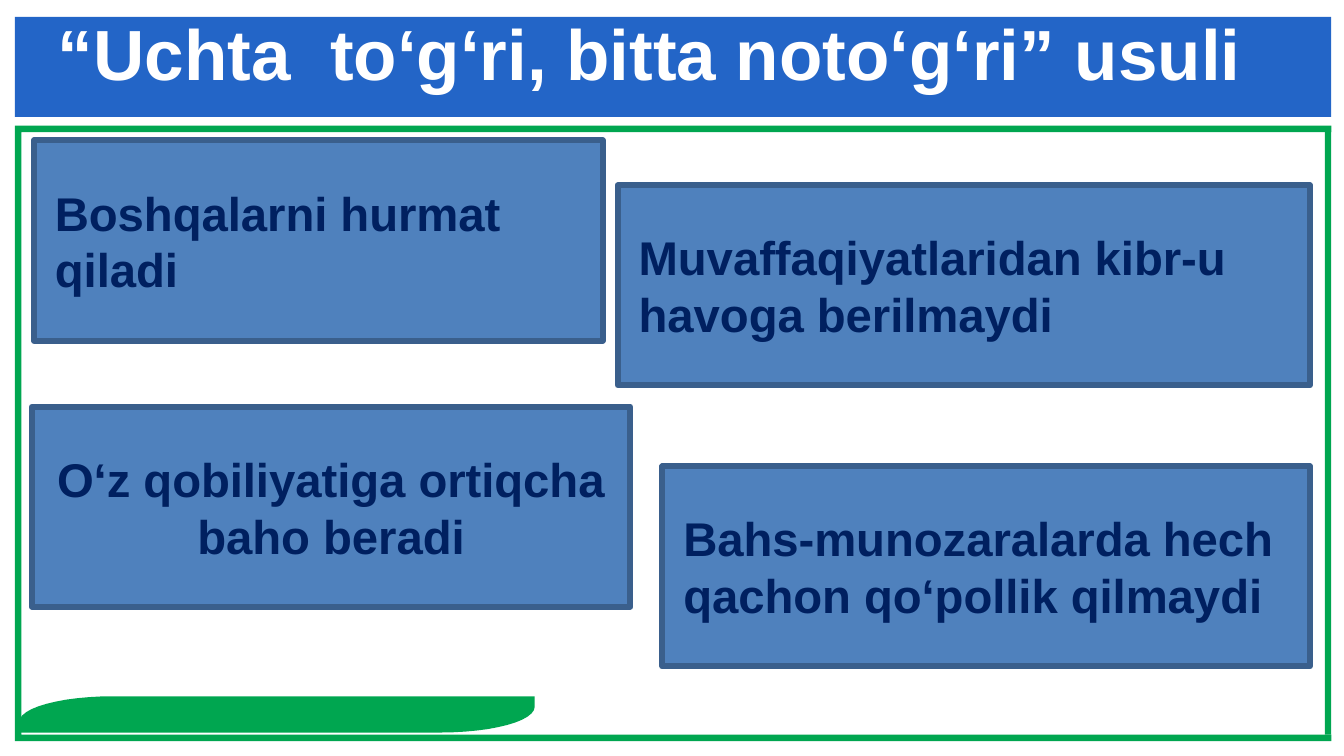
import math
import pptx
import pptx.util
import pptx.dml.color
import pptx.enum.shapes
import pptx.enum.text

Inches, Pt = pptx.util.Inches, pptx.util.Pt
RGB = pptx.dml.color.RGBColor.from_string
ALIGN = pptx.enum.text.PP_ALIGN
ANCHOR = pptx.enum.text.MSO_ANCHOR
RECTANGLE = pptx.enum.shapes.MSO_SHAPE.RECTANGLE

TITLE = "“Uchta  to‘g‘ri, bitta noto‘g‘ri” usuli"
STATEMENTS = [
    {"text": "Muvaffaqiyatlaridan kibr-u havoga berilmaydi",
     "left": 2.9, "top": 0.87, "width": 3.25, "align": ALIGN.LEFT},
    {"text": "Boshqalarni hurmat qiladi",
     "left": 0.16, "top": 0.66, "width": 2.67, "align": ALIGN.LEFT},
    {"text": "Bahs-munozaralarda hech qachon qo‘pollik qilmaydi",
     "left": 3.11, "top": 2.19, "width": 3.04, "align": ALIGN.LEFT},
    {"text": "O‘z qobiliyatiga ortiqcha baho beradi",
     "left": 0.15, "top": 1.91, "width": 2.81, "align": ALIGN.CENTER},
]

THEME = {
    "font": "Arial", "title_size": 24, "title_spacing": 12, "body_size": 16,
    "line_width": 2, "green": "00A650", "header": "2365C7", "title": "FFFFFF",
    "box": "4F81BD", "box_line": "3A5F8C", "body": "002060",
}

SLIDE_W, SLIDE_H = 6.31, 3.55
LEFT, RIGHT = 0.07, 6.25
HEADER_TOP, HEADER_H = 0.08, 0.47
FRAME_TOP, FRAME_BOTTOM, FRAME_EDGE = 0.59, 3.48, 0.03
TITLE_BOX = (0.15, 0.23, 5.8, 0.3)
STATEMENT_H = 0.94
RIBBON_LEFT, RIBBON_TOP, RIBBON_RIGHT, RIBBON_BOTTOM = 0.09, 3.27, 2.51, 3.44
CURVE_W, CURVE_H, CURVE_STEPS = 0.44, 0.12, 12


def write(sp, text, size, color, align=ALIGN.LEFT, anchor=ANCHOR.TOP, wrap=True, spacing=None):
    tf = sp.text_frame
    tf.word_wrap = wrap
    tf.vertical_anchor = anchor
    p = tf.paragraphs[0]
    p.alignment = align
    if spacing:
        p.line_spacing = Pt(spacing)
    r = p.add_run()
    r.text = text
    r.font.name = THEME["font"]
    r.font.size = Pt(size)
    r.font.bold = True
    r.font.color.rgb = RGB(color)


def paint(sp, fill, line=None):
    sp.shadow.inherit = False
    sp.fill.solid()
    sp.fill.fore_color.rgb = RGB(fill)
    if line:
        sp.line.color.rgb = RGB(line)
        sp.line.width = Pt(THEME["line_width"])
    else:
        sp.line.fill.background()


def add_rect(slide, left, top, width, height, fill, line=None):
    box = [Inches(v) for v in (left, top, width, height)]
    sp = slide.shapes.add_shape(RECTANGLE, *box)
    paint(sp, fill, line)
    return sp


def add_outline(slide, points, fill):
    start, *rest = [(Inches(x), Inches(y)) for x, y in points]
    builder = slide.shapes.build_freeform(*start, scale=1.0)
    builder.add_line_segments(rest, close=True)
    paint(builder.convert_to_shape(), fill)


def add_header(slide):
    add_rect(slide, LEFT, HEADER_TOP, RIGHT - LEFT, HEADER_H, THEME["header"])


def add_frame(slide):
    inner_left = LEFT + FRAME_EDGE
    inner_top, inner_bottom = FRAME_TOP + FRAME_EDGE, FRAME_BOTTOM - FRAME_EDGE
    outer = [(RIGHT, FRAME_TOP), (LEFT, FRAME_TOP), (LEFT, FRAME_BOTTOM), (RIGHT, FRAME_BOTTOM)]
    inner = [(RIGHT, inner_bottom), (inner_left, inner_bottom),
             (inner_left, inner_top), (RIGHT, inner_top)]
    add_outline(slide, outer + inner, THEME["green"])
    add_rect(slide, RIGHT - FRAME_EDGE, inner_top, FRAME_EDGE, inner_bottom - inner_top,
             THEME["green"])


def add_ribbon(slide):
    upper_half = [(RIBBON_RIGHT, RIBBON_TOP)]
    for step in range(CURVE_STEPS + 1):
        angle = math.pi / 2 * step / CURVE_STEPS
        upper_half.append((RIBBON_LEFT + CURVE_W * (1 - math.sin(angle)),
                           RIBBON_TOP + CURVE_H * (1 - math.cos(angle))))
    lower_half = [(RIBBON_LEFT + RIBBON_RIGHT - x, RIBBON_TOP + RIBBON_BOTTOM - y)
                  for x, y in upper_half]
    add_outline(slide, upper_half + lower_half, THEME["green"])


def add_title(slide):
    sp = slide.shapes.add_textbox(*[Inches(v) for v in TITLE_BOX])
    write(sp, TITLE, THEME["title_size"], THEME["title"], align=ALIGN.CENTER,
          wrap=False, spacing=THEME["title_spacing"])


def add_statement(slide, text, left, top, width, align):
    sp = add_rect(slide, left, top, width, STATEMENT_H, THEME["box"], THEME["box_line"])
    write(sp, text, THEME["body_size"], THEME["body"], align=align, anchor=ANCHOR.MIDDLE)


def main():
    prs = pptx.Presentation()
    prs.slide_width, prs.slide_height = Inches(SLIDE_W), Inches(SLIDE_H)
    slide = prs.slides.add_slide(prs.slide_layouts[6])
    add_frame(slide)
    add_header(slide)
    add_ribbon(slide)
    add_title(slide)
    for statement in STATEMENTS:
        add_statement(slide, **statement)
    prs.save("out.pptx")


if __name__ == "__main__":
    main()
